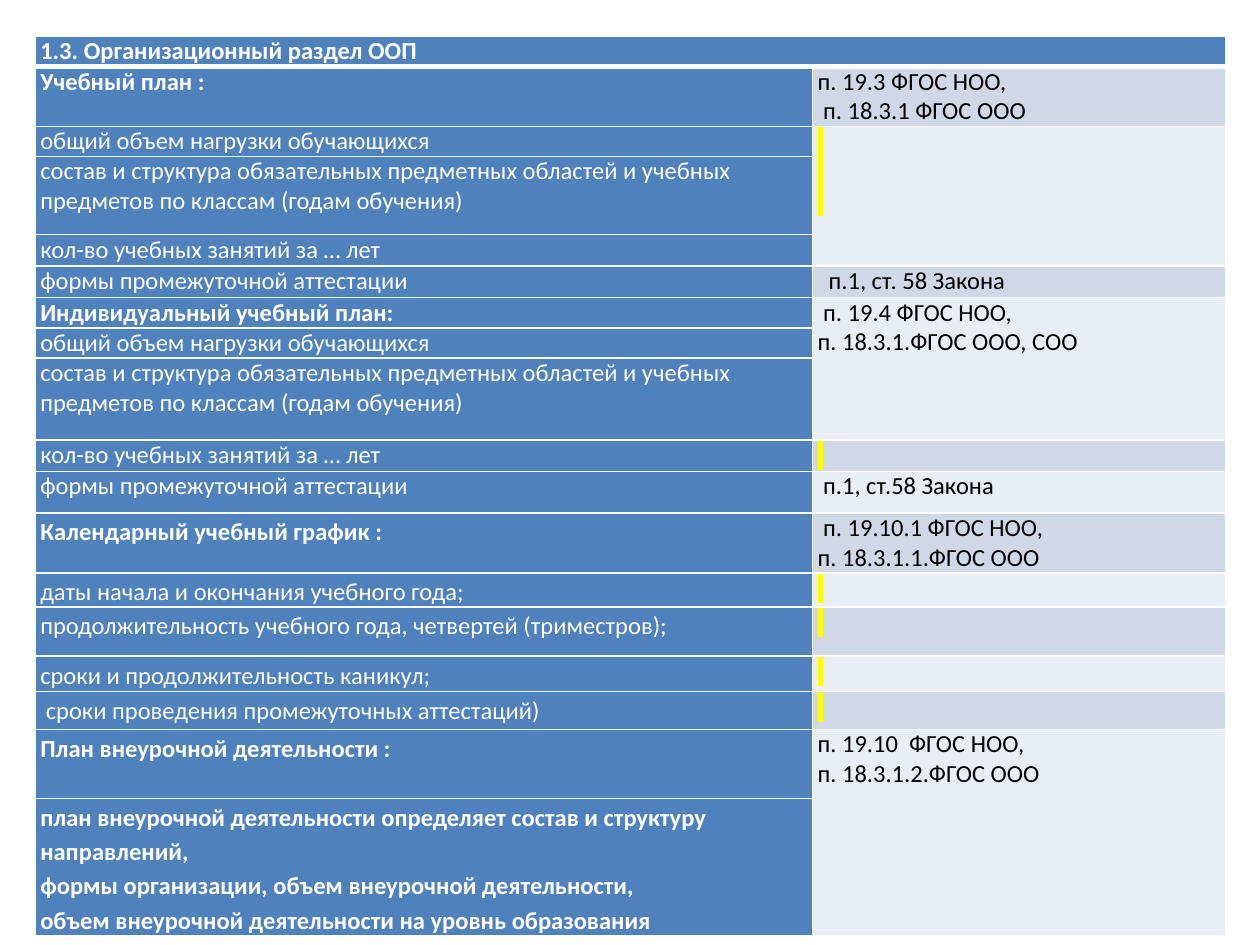
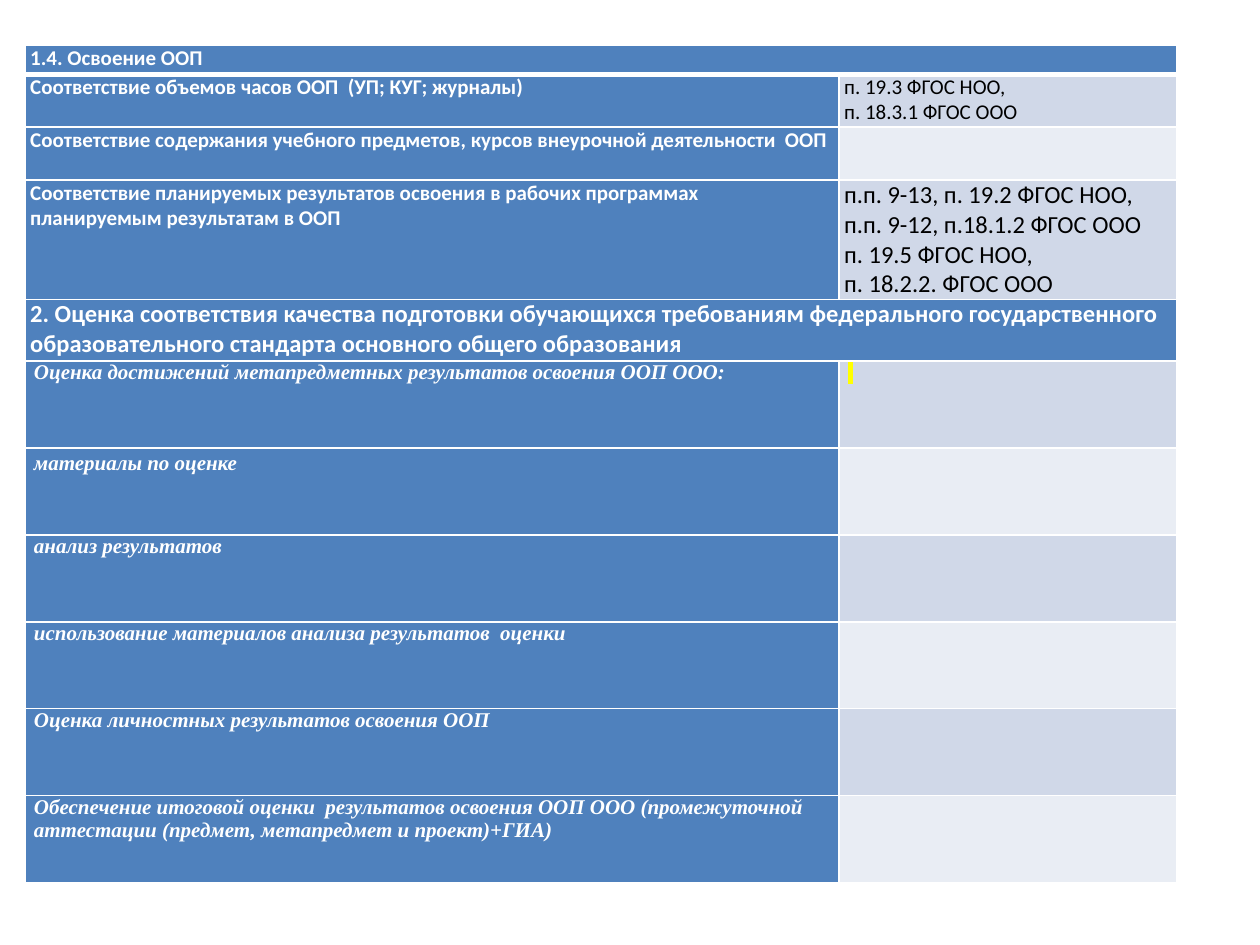
"""Builds two slides with tables of programme requirements and the clauses they rest on."""
from lxml.etree import SubElement
from pptx import Presentation
from pptx.dml.color import RGBColor
from pptx.oxml.ns import qn
from pptx.util import Inches, Pt

COLORS = {
    "label": "4F81BD",
    "odd": "D0D8E8",
    "even": "E9EDF4",
    "white": "FFFFFF",
    "black": "000000",
    "marker": "FFFF00",
}
MARK = " "
FULL = "full width"
BOLD = {"bold": True}
LOOSE = {"spacing": 1.15}
LOOSE_BOLD = {"bold": True, "spacing": 1.15}
SMALL = {"size": 12, "bold": True}
SERIF = {"size": 12, "bold": True, "italic": True, "font": "Times New Roman", "margin": 0.07}
SERIF_LOOSE = {**SERIF, "spacing": 1.15}

LOAD = "общий объем нагрузки обучающихся"
SUBJECTS = ("состав и структура обязательных предметных областей и учебных предметов "
            "по классам (годам обучения)")
LESSONS = "кол-во учебных занятий за … лет"
ATTESTATION = "формы промежуточной аттестации"

# Each row: height, label, label format, clause (None continues the clause above), clause format
TABLES = [
    {
        "left": 0.28, "top": 0.29, "columns": [6.17, 3.28],
        "rows": [
            (0.24, "1.3. Организационный раздел ООП", BOLD, FULL, {}),
            (0.47, "Учебный план :", BOLD, "п. 19.3 ФГОС НОО,\n п. 18.3.1 ФГОС ООО", {}),
            (0.24, LOAD, {}, "\n".join([MARK] * 3), {}),
            (0.62, SUBJECTS, {}, None, {}),
            (0.25, LESSONS, {}, None, {}),
            (0.25, ATTESTATION, {}, "  п.1, ст. 58 Закона", {}),
            (0.24, "Индивидуальный учебный план:", BOLD,
             " п. 19.4 ФГОС НОО,\nп. 18.3.1.ФГОС ООО, СОО", {}),
            (0.24, LOAD, {}, None, {}),
            (0.65, SUBJECTS, {}, None, {}),
            (0.25, LESSONS, {}, MARK, {}),
            (0.33, ATTESTATION, {}, " п.1, ст.58 Закона", {}),
            (0.47, "Календарный учебный график :", LOOSE_BOLD,
             " п. 19.10.1 ФГОС НОО,\nп. 18.3.1.1.ФГОС ООО", {}),
            (0.27, "даты начала и окончания учебного года;", LOOSE, MARK, {}),
            (0.39, "продолжительность учебного года, четвертей (триместров);", LOOSE, MARK, {}),
            (0.28, "сроки и продолжительность каникул;", LOOSE, MARK, {}),
            (0.3, " сроки проведения промежуточных аттестаций)", LOOSE, MARK, {}),
            (0.55, "План внеурочной деятельности :", LOOSE_BOLD,
             "п. 19.10  ФГОС НОО,\nп. 18.3.1.2.ФГОС ООО", {}),
            (1.07, "план внеурочной деятельности определяет состав и структуру направлений,\n"
                   "формы организации, объем внеурочной деятельности,\n"
                   "объем внеурочной деятельности на уровнь образования", LOOSE_BOLD, None, {}),
        ],
    },
    {
        "left": 0.2, "top": 0.36, "columns": [6.46, 2.68],
        "rows": [
            (0.23, "1.4. Освоение ООП", SMALL, FULL, {}),
            (0.42, "Соответствие объемов часов ООП  (УП; КУГ; журналы)", SMALL,
             "п. 19.3 ФГОС НОО,\nп. 18.3.1 ФГОС ООО", {"size": 12}),
            (0.42, "Соответствие содержания учебного предметов, курсов внеурочной "
                   "деятельности  ООП", SMALL, "", {}),
            (0.94, "Соответствие планируемых результатов освоения в рабочих программах "
                   "планируемым результатам в ООП", SMALL,
             "п.п. 9-13, п. 19.2 ФГОС НОО,\nп.п. 9-12, п.18.1.2 ФГОС ООО\n"
             "п. 19.5 ФГОС НОО,\nп. 18.2.2. ФГОС ООО", {}),
            (0.49, "2. Оценка соответствия качества подготовки обучающихся требованиям "
                   "федерального государственного образовательного стандарта основного "
                   "общего образования", BOLD, FULL, {}),
            (0.69, "Оценка достижений метапредметных результатов освоения ООП ООО:", SERIF,
             MARK, SERIF),
            (0.69, "материалы по оценке", SERIF_LOOSE, "", {}),
            (0.69, "анализ результатов", SERIF, "", {}),
            (0.69, "использование материалов анализа результатов  оценки", SERIF, "", {}),
            (0.69, "Оценка личностных результатов освоения ООП", SERIF, "", {}),
            (0.69, "Обеспечение итоговой оценки  результатов освоения ООП ООО "
                   "(промежуточной аттестации (предмет, метапредмет и проект)+ГИА)", SERIF, "", {}),
        ],
    },
]


def write(cell, text, color="black", size=14, bold=False, italic=False,
          font="Calibri", spacing=None, margin=0.04):
    cell.margin_left = cell.margin_right = Inches(margin)
    cell.margin_top = cell.margin_bottom = 0
    for index, line in enumerate(text.split("\n")):
        paragraph = cell.text_frame.paragraphs[0] if index == 0 else cell.text_frame.add_paragraph()
        paragraph.line_spacing = spacing
        if not line:
            paragraph._p.get_or_add_endParaRPr().set("sz", str(size * 100))
            continue
        run = paragraph.add_run()
        run.text = line
        run.font.size = Pt(size)
        run.font.bold = bold
        run.font.italic = italic
        run.font.name = font
        run.font.color.rgb = RGBColor.from_string(COLORS[color])
        if line == MARK:
            properties = run.font._element
            highlight = SubElement(properties, qn("a:highlight"))
            SubElement(highlight, qn("a:srgbClr"), val=COLORS["marker"])
            properties.find(qn("a:solidFill")).addnext(highlight)


def style(cell, fill, top=1, bottom=1):
    cell.fill.solid()
    cell.fill.fore_color.rgb = RGBColor.from_string(COLORS[fill])
    properties = cell._tc.get_or_add_tcPr()
    for index, (side, width) in enumerate([("L", 1), ("R", 1), ("T", top), ("B", bottom)]):
        line = SubElement(properties, qn(f"a:ln{side}"), w=str(Pt(width)))
        line_fill = SubElement(line, qn("a:solidFill"))
        SubElement(line_fill, qn("a:srgbClr"), val=COLORS["white"])
        properties.insert(index, line)


presentation = Presentation()
presentation.slide_width = Inches(10)
presentation.slide_height = Inches(7.5)

for content in TABLES:
    slide = presentation.slides.add_slide(presentation.slide_layouts[6])
    rows = content["rows"]
    shape = slide.shapes.add_table(
        len(rows), 2, Inches(content["left"]), Inches(content["top"]),
        Inches(sum(content["columns"])), Inches(sum(row[0] for row in rows)))
    table = shape.table
    for column, width in zip(table.columns, content["columns"]):
        column.width = Inches(width)

    clause_row = 0
    for number, (height, label, label_format, clause, clause_format) in enumerate(rows):
        table.rows[number].height = Inches(height)
        label_cell, clause_cell = table.cell(number, 0), table.cell(number, 1)
        borders = {"top": 3 if number == 1 else 1, "bottom": 3 if number == 0 else 1}
        style(label_cell, "label", **borders)
        style(clause_cell, "odd" if number % 2 else "even", **borders)
        write(label_cell, label, color="white", **label_format)
        write(clause_cell, "" if clause in (None, FULL) else clause, **clause_format)
        if clause == FULL:
            label_cell.merge(clause_cell)
        elif clause is not None:
            clause_row = number
        if clause is None and (number + 1 == len(rows) or rows[number + 1][3] is not None):
            table.cell(clause_row, 1).merge(clause_cell)

presentation.save("out.pptx")
